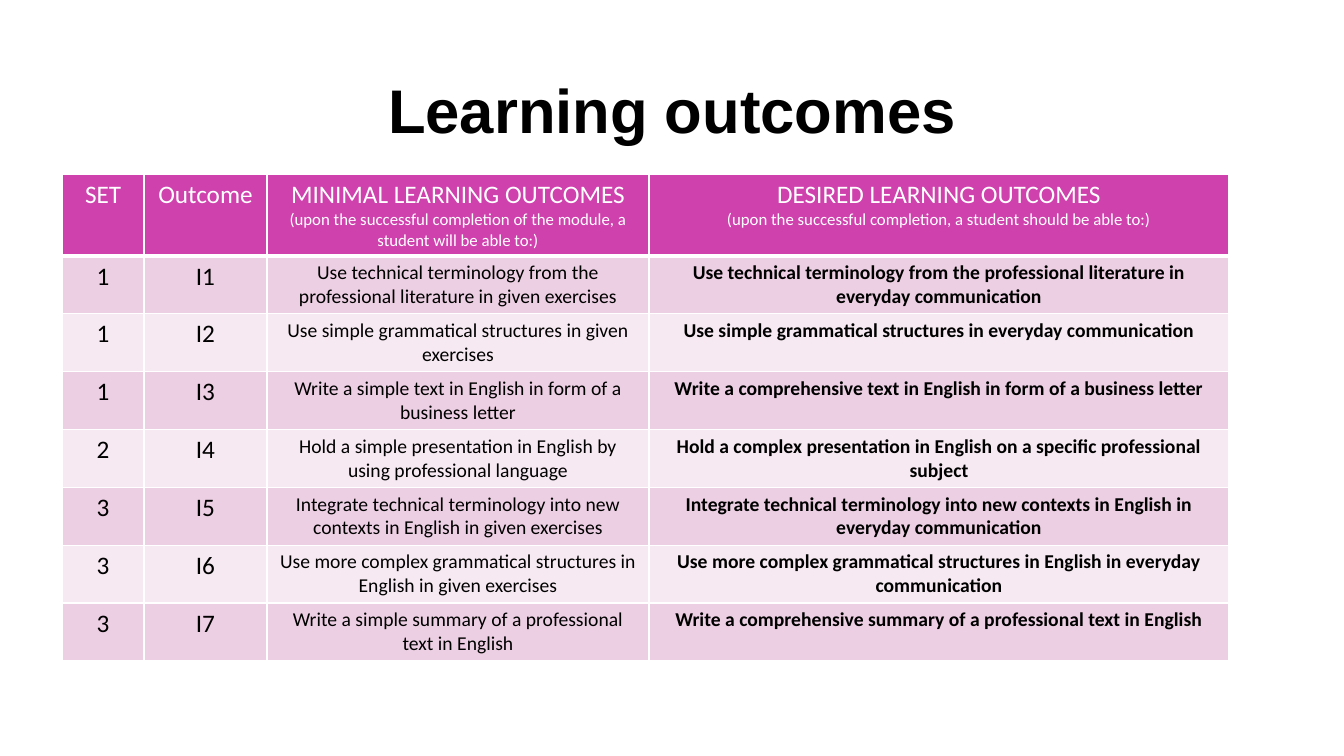
from dataclasses import dataclass

from lxml import etree
from pptx import Presentation
from pptx.dml.color import RGBColor
from pptx.enum.text import MSO_ANCHOR, PP_ALIGN
from pptx.oxml.ns import qn
from pptx.util import Cm, Pt

CENTER = PP_ALIGN.CENTER
MIDDLE = MSO_ANCHOR.MIDDLE
TITLE_ONLY = 5


@dataclass(frozen=True)
class Theme:
    title_font: str = "Arial"
    table_font: str = "Calibri"
    black: str = "000000"
    white: str = "FFFFFF"
    header_fill: str = "CF41AD"
    band_fills: tuple = ("EDCFE3", "F6E9F1")
    title_size: int = 44
    label_size: int = 18
    outcome_size: int = 14
    note_size: int = 12
    border: int = 1
    header_border: int = 3


THEME = Theme()

TITLE_BOX = (Cm(2.34), Cm(1.02), Cm(29.21), Cm(3.68))
TABLE_BOX = (Cm(1.57), Cm(4.39), Cm(29.4), Cm(12.12))
COLUMN_SHARES = (0.07, 0.1055, 0.3275, 0.497)
ROW_HEIGHT = Cm(1.04)

HEADERS = (
    ("SET",),
    ("Outcome",),
    ("MINIMAL LEARNING OUTCOMES",
     "(upon the successful completion of the module, a student will be able to:)"),
    ("DESIRED LEARNING OUTCOMES",
     "(upon the successful completion, a student should be able to:)"),
)

# Set number, minimal outcome, desired outcome
OUTCOMES = (
    ("1", "Use technical terminology from the professional literature in given exercises",
     "Use technical terminology from the professional literature in everyday communication"),
    ("1", "Use simple grammatical structures in given exercises",
     "Use simple grammatical structures in everyday communication"),
    ("1", "Write a simple text in English in form of a business letter",
     "Write a comprehensive text in English in form of a business letter"),
    ("2", "Hold a simple presentation in English by using professional language",
     "Hold a complex presentation in English on a specific professional subject"),
    ("3", "Integrate technical terminology into new contexts in English in given exercises",
     "Integrate technical terminology into new contexts in English in everyday communication"),
    ("3", "Use more complex grammatical structures in English in given exercises",
     "Use more complex grammatical structures in English in everyday communication"),
    ("3", "Write a simple summary of a professional text in English",
     "Write a comprehensive summary of a professional text in English"),
)


def add_span(para, text, font, size, color, bold=False):
    para.alignment = CENTER
    span = para.add_run()
    span.text = text
    span.font.name = font
    span.font.size = Pt(size)
    span.font.bold = bold
    span.font.color.rgb = RGBColor.from_string(color)


def style_cell(cell, fill, bottom_border=THEME.border):
    """Draw the four borders, then the fill, in the order the schema asks for."""
    properties = cell._tc.get_or_add_tcPr()
    for side in ("lnL", "lnR", "lnT", "lnB"):
        width = bottom_border if side == "lnB" else THEME.border
        line = etree.SubElement(properties, qn(f"a:{side}"), w=str(Pt(width)))
        solid = etree.SubElement(line, qn("a:solidFill"))
        etree.SubElement(solid, qn("a:srgbClr"), val=THEME.white)
    cell.fill.solid()
    cell.fill.fore_color.rgb = RGBColor.from_string(fill)


def place_title(page, box, text):
    title = page.shapes.title
    title.left, title.top, title.width, title.height = box
    title.text_frame.vertical_anchor = MIDDLE
    para = title.text_frame.paragraphs[0]
    para.line_spacing = 0.9
    add_span(para, text, THEME.title_font, THEME.title_size, THEME.black, bold=True)


def fill_header(table):
    for column, lines in enumerate(HEADERS):
        cell = table.cell(0, column)
        style_cell(cell, THEME.header_fill, THEME.header_border)
        for index, text in enumerate(lines):
            frame = cell.text_frame
            para = frame.add_paragraph() if index else frame.paragraphs[0]
            size = THEME.note_size if index else THEME.label_size
            add_span(para, text, THEME.table_font, size, THEME.white)


def fill_outcomes(table):
    sizes = (THEME.label_size,) * 2 + (THEME.outcome_size,) * 2
    for number, (set_number, minimal, desired) in enumerate(OUTCOMES, start=1):
        texts = (set_number, f"I{number}", minimal, desired)
        for column, (text, size) in enumerate(zip(texts, sizes)):
            cell = table.cell(number, column)
            style_cell(cell, THEME.band_fills[(number - 1) % 2])
            add_span(cell.text_frame.paragraphs[0], text, THEME.table_font, size,
                     THEME.black, bold=text == desired)


def place_outcome_table(page, box):
    frame = page.shapes.add_table(len(OUTCOMES) + 1, len(HEADERS), *box)
    table = frame.table
    for column, share in zip(table.columns, COLUMN_SHARES):
        column.width = int(box[2] * share)
    for row in table.rows:
        row.height = ROW_HEIGHT
    frame.height = box[3]
    fill_header(table)
    fill_outcomes(table)


def main():
    deck = Presentation()
    deck.slide_width, deck.slide_height = Cm(33.87), Cm(19.05)
    page = deck.slides.add_slide(deck.slide_layouts[TITLE_ONLY])
    place_title(page, TITLE_BOX, "Learning outcomes")
    place_outcome_table(page, TABLE_BOX)
    deck.save("out.pptx")


if __name__ == "__main__":
    main()
